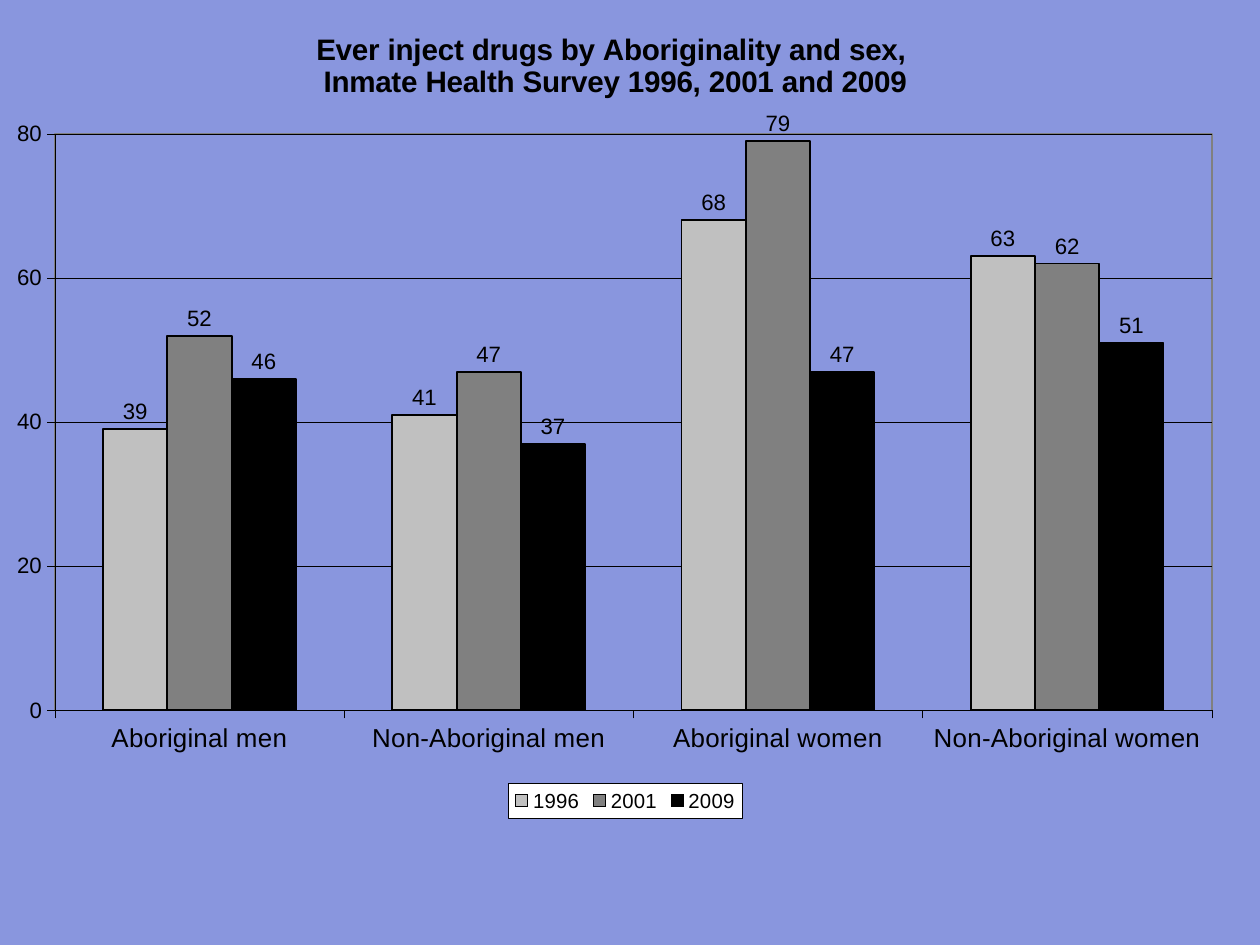
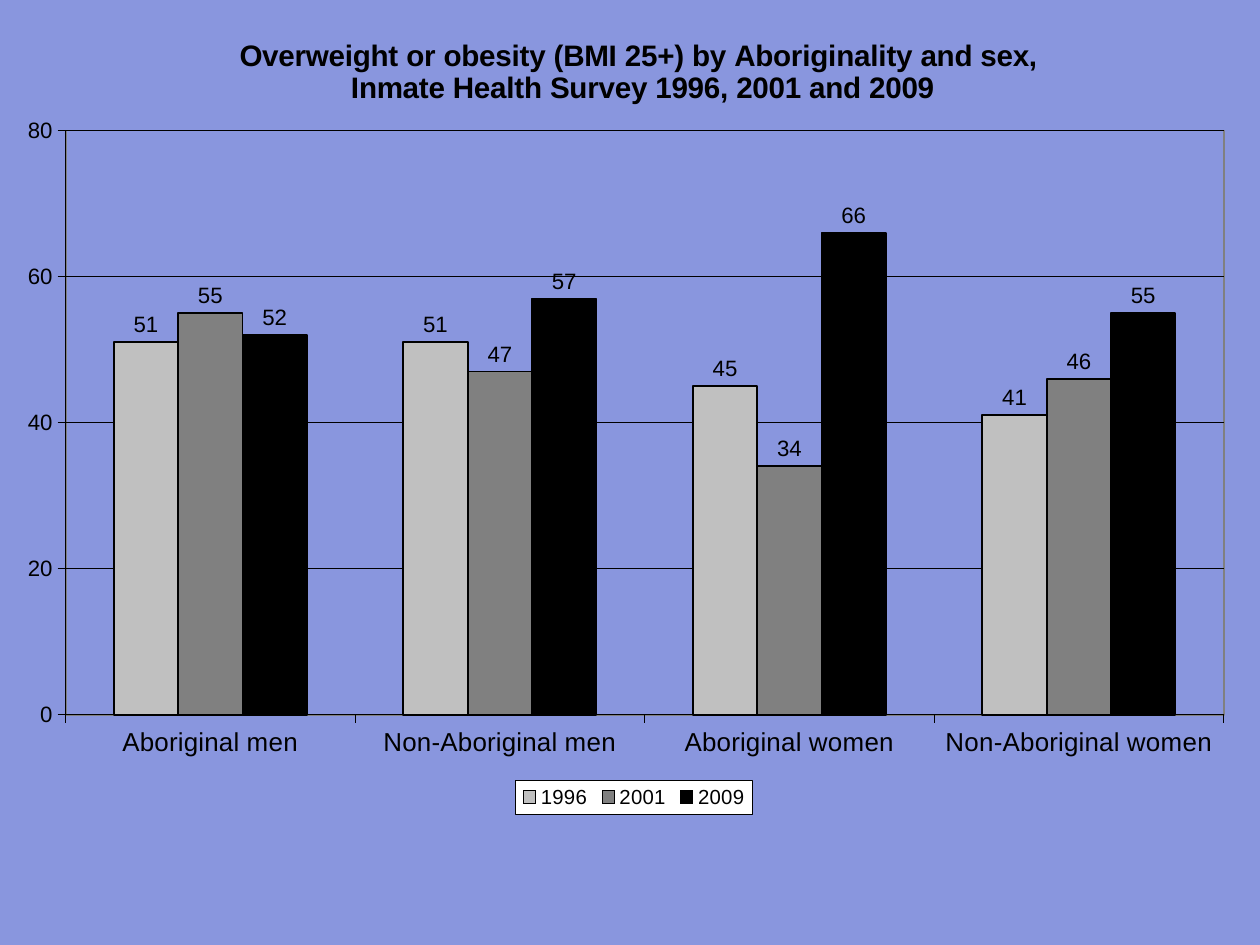
"""Build two slides of clustered column charts from the Inmate Health Survey."""
from dataclasses import dataclass

from lxml import etree
from pptx import Presentation
from pptx.chart.data import CategoryChartData
from pptx.dml.color import RGBColor
from pptx.enum.chart import XL_CHART_TYPE, XL_LABEL_POSITION, XL_LEGEND_POSITION, XL_TICK_MARK
from pptx.oxml import parse_xml
from pptx.oxml.ns import nsdecls, qn
from pptx.util import Inches, Pt

COLUMNS = XL_CHART_TYPE.COLUMN_CLUSTERED
OUTSIDE_END = XL_LABEL_POSITION.OUTSIDE_END
BOTTOM = XL_LEGEND_POSITION.BOTTOM
TICK_OUT, TICK_NONE = XL_TICK_MARK.OUTSIDE, XL_TICK_MARK.NONE


@dataclass(frozen=True)
class Theme:
    font: str = "Arial"
    background: str = "8996DE"
    ink: str = "000000"
    legend_fill: str = "FFFFFF"
    plot_border: str = "808080"
    title_size: int = 16
    category_size: int = 14
    value_size: int = 12
    legend_size: int = 11
    thin: float = 0.25
    outline: float = 1


THEME = Theme()
INK = RGBColor.from_string(THEME.ink)
YEAR_COLOURS = {"1996": "C0C0C0", "2001": "808080", "2009": "000000"}
GROUPS = ["Aboriginal men", "Non-Aboriginal men", "Aboriginal women", "Non-Aboriginal women"]
SURVEY_LINE = "Inmate Health Survey 1996, 2001 and 2009"

SURVEY_CHARTS = [
    {
        "topic": "Ever inject drugs by Aboriginality and sex, ",
        "frame": (0, 0.02, 9.37, 6.12),
        "title_at": (0.25, 0.03),
        "plot_at": (0.044, 0.161, 0.926, 0.707),
        "legend_at": (0.407, 0.957, 0.187, 0.043),
        "values": [(39, 41, 68, 63), (52, 47, 79, 62), (46, 37, 47, 51)],
    },
    {
        "topic": "Overweight or obesity (BMI 25+) by Aboriginality and sex, ",
        "frame": (0.08, 0, 9.37, 6.2),
        "title_at": (0.18, 0.04),
        "plot_at": (0.044, 0.158, 0.927, 0.707),
        "legend_at": (0.404, 0.944, 0.19, 0.041),
        "values": [(51, 51, 45, 41), (55, 47, 34, 46), (52, 57, 66, 55)],
    },
]


def place(part, index, box, inner=False):
    """Give a chart part a manual layout in fractions of the chart."""
    for old_layout in part.findall(qn("c:layout")):
        part.remove(old_layout)
    layout = parse_xml(f"<c:layout {nsdecls('c')}><c:manualLayout/></c:layout>")
    settings = [("layoutTarget", "inner")] if inner else []
    settings += [("xMode", "edge"), ("yMode", "edge")]
    settings += zip("xywh", box)
    for tag, value in settings:
        etree.SubElement(layout[0], qn(f"c:{tag}")).set("val", str(value))
    part.insert(index, layout)


def paint(part, fill=None, line=None, width=0):
    """Set the fill and border of a chart part."""
    solid = '<a:solidFill><a:srgbClr val="{}"/></a:solidFill>'
    fill_xml = solid.format(fill) if fill else "<a:noFill/>"
    line_xml = solid.format(line) if line else "<a:noFill/>"
    look = parse_xml(
        f"<c:spPr {nsdecls('c', 'a')}>{fill_xml}"
        f'<a:ln w="{Pt(width)}">{line_xml}</a:ln></c:spPr>'
    )
    text_look = part.find(qn("c:txPr"))
    if text_look is None:
        part.append(look)
    else:
        text_look.addprevious(look)


prs = Presentation()
prs.slide_width, prs.slide_height = Inches(9.45), Inches(7.09)
master_fill = prs.slide_master.background.fill
master_fill.solid()
master_fill.fore_color.rgb = RGBColor.from_string(THEME.background)

for survey in SURVEY_CHARTS:
    slide = prs.slides.add_slide(prs.slide_layouts[6])
    data = CategoryChartData()
    data.categories = GROUPS
    for year, percentages in zip(YEAR_COLOURS, survey["values"]):
        data.add_series(year, percentages)
    frame = [Inches(length) for length in survey["frame"]]
    chart = slide.shapes.add_chart(COLUMNS, *frame, data).chart

    chart.has_title = True
    heading = chart.chart_title.text_frame
    heading.text = survey["topic"] + "\n" + SURVEY_LINE
    chart.has_legend = True
    legend = chart.legend
    legend.position = BOTTOM
    legend.include_in_layout = False

    columns = chart.plots[0]
    columns.gap_width, columns.overlap = 150, 0
    columns.vary_by_categories = False
    columns.has_data_labels = True
    labels = columns.data_labels
    labels.show_value = True
    labels.position = OUTSIDE_END
    for series, colour in zip(columns.series, YEAR_COLOURS.values()):
        series.invert_if_negative = False
        series.format.fill.solid()
        series.format.fill.fore_color.rgb = RGBColor.from_string(colour)
        series.format.line.color.rgb = INK
        series.format.line.width = Pt(THEME.outline)

    groups, scale = chart.category_axis, chart.value_axis
    scale_format = {"minimum_scale": 0, "maximum_scale": 80, "major_unit": 20,
                    "has_major_gridlines": True}
    for name, value in scale_format.items():
        setattr(scale, name, value)
    for axis in (groups, scale):
        axis.major_tick_mark, axis.minor_tick_mark = TICK_OUT, TICK_NONE
    for ruled in (groups, scale, scale.major_gridlines):
        ruled.format.line.color.rgb = INK
        ruled.format.line.width = Pt(THEME.thin)

    fonts = [
        (chart.font, THEME.value_size, False),
        (groups.tick_labels.font, THEME.category_size, False),
        (scale.tick_labels.font, THEME.value_size, False),
        (labels.font, THEME.value_size, False),
        (legend.font, THEME.legend_size, False),
    ]
    fonts += [(line.runs[0].font, THEME.title_size, True) for line in heading.paragraphs]
    for font, size, bold in fonts:
        for name, value in {"name": THEME.font, "size": Pt(size), "bold": bold}.items():
            setattr(font, name, value)
        font.color.rgb = INK

    chart_space = chart.element if hasattr(chart, "element") else chart._chartSpace
    plot_area = chart_space.find(".//" + qn("c:plotArea"))
    legend_box = chart_space.find(".//" + qn("c:legend"))
    place(chart_space.find(".//" + qn("c:title")), 1, survey["title_at"])
    place(plot_area, 0, survey["plot_at"], inner=True)
    place(legend_box, 1, survey["legend_at"])
    paint(chart_space)
    paint(plot_area, line=THEME.plot_border, width=THEME.outline)
    paint(legend_box, THEME.legend_fill, THEME.ink, THEME.thin)

prs.save("out.pptx")
